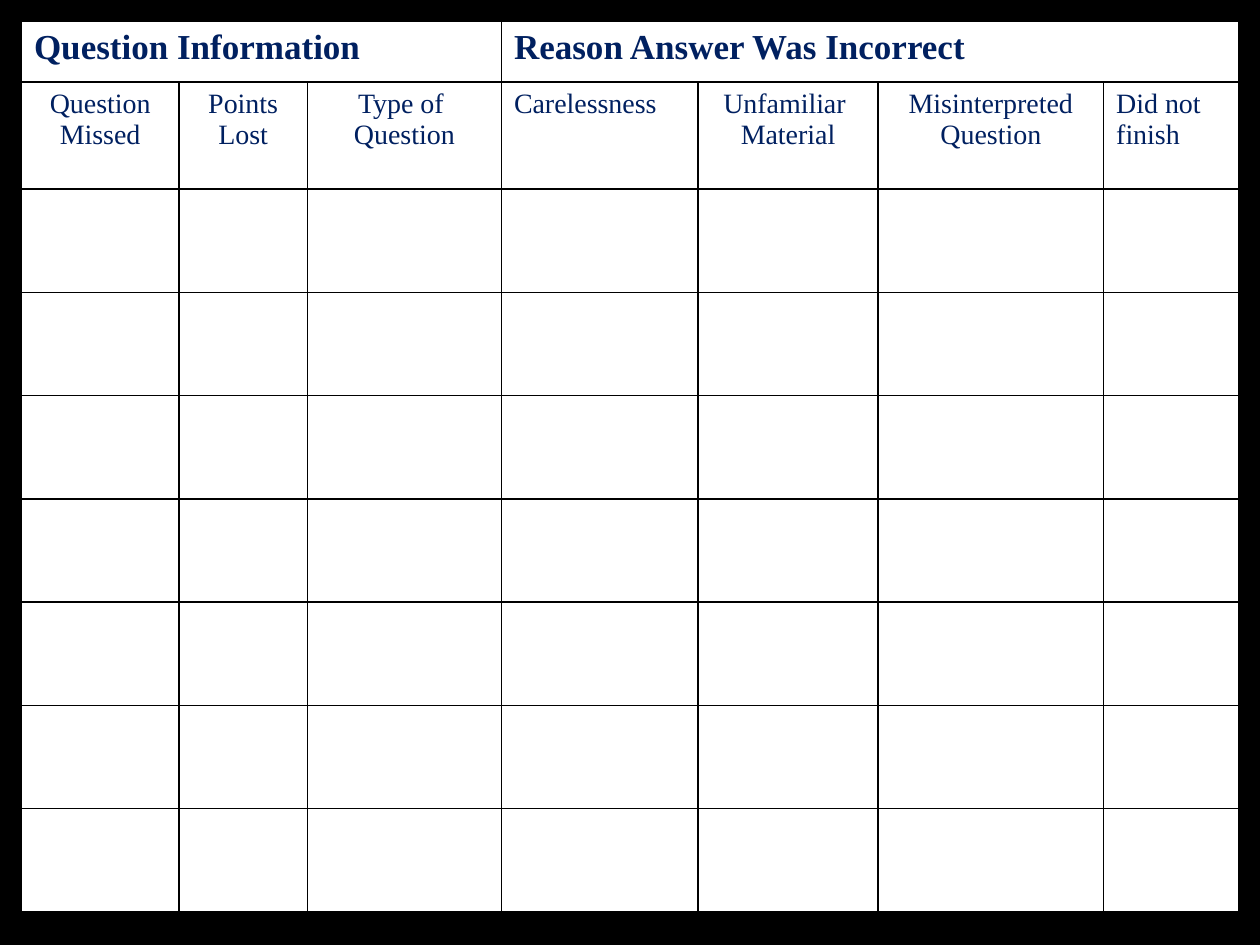
from itertools import product

from lxml import etree
from pptx import Presentation
from pptx.dml.color import RGBColor
from pptx.enum.text import PP_ALIGN
from pptx.util import Inches, Pt

LEFT, MID = PP_ALIGN.LEFT, PP_ALIGN.CENTER

THEME = {
    "font": "Times New Roman",
    "ink": RGBColor.from_string("002060"),
    "paper": RGBColor.from_string("FFFFFF"),
    "back": RGBColor.from_string("000000"),
    "rule": "000000",
    "head": Pt(20),
    "body": Pt(16),
    "line": Pt(1),
}

GROUPS = [
    ("Question Information", 3),
    ("Reason Answer Was Incorrect", 4),
]
FIELDS = [
    ("Question\nMissed", MID, 1.25),
    ("Points\nLost", MID, 1.02),
    ("Type of \nQuestion", MID, 1.54),
    ("Carelessness", LEFT, 1.56),
    ("Unfamiliar \nMaterial", MID, 1.43),
    ("Misinterpreted\nQuestion", MID, 1.79),
    ("Did not\nfinish", LEFT, 1.07),
]
BLANKS = 7
ROWS = [0.48, 0.85] + [0.82] * BLANKS
EDGE = 0.17
HANG = Inches(0.38)
NS = "http://schemas.openxmlformats.org/drawingml/2006/main"


def frame(cell):
    props = cell._tc.get_or_add_tcPr()
    for side in ("lnL", "lnR", "lnT", "lnB"):
        line = etree.SubElement(props, f"{{{NS}}}{side}", w=str(THEME["line"]))
        fill = etree.SubElement(line, f"{{{NS}}}solidFill")
        etree.SubElement(fill, f"{{{NS}}}srgbClr", val=THEME["rule"])
    cell.fill.solid()
    cell.fill.fore_color.rgb = THEME["paper"]


def write(cell, text, size, align=LEFT, bold=False):
    cell.text = text
    for para in cell.text_frame.paragraphs:
        para.alignment = align
        props = para._p.get_or_add_pPr()
        props.set("marL", str(HANG))
        props.set("indent", str(-HANG))
        font = para.font
        font.name, font.size, font.bold = THEME["font"], size, bold
        font.color.rgb = THEME["ink"]


def main():
    deck = Presentation()
    deck.slide_width, deck.slide_height = Inches(10), Inches(7.5)
    slide = deck.slides.add_slide(deck.slide_layouts[6])
    slide.background.fill.solid()
    slide.background.fill.fore_color.rgb = THEME["back"]

    wide = [width for _, _, width in FIELDS]
    grid = slide.shapes.add_table(
        len(ROWS), len(wide), Inches(EDGE), Inches(EDGE),
        Inches(sum(wide)), Inches(sum(ROWS)),
    ).table
    for col, width in zip(grid.columns, wide):
        col.width = Inches(width)
    for row, height in zip(grid.rows, ROWS):
        row.height = Inches(height)
    for row, col in product(range(len(ROWS)), range(len(wide))):
        frame(grid.cell(row, col))

    start = 0
    for text, span in GROUPS:
        cell = grid.cell(0, start)
        cell.merge(grid.cell(0, start + span - 1))
        write(cell, text, THEME["head"], bold=True)
        start += span
    for col, (text, align, _) in enumerate(FIELDS):
        write(grid.cell(1, col), text, THEME["body"], align)

    deck.save("out.pptx")


if __name__ == "__main__":
    main()
